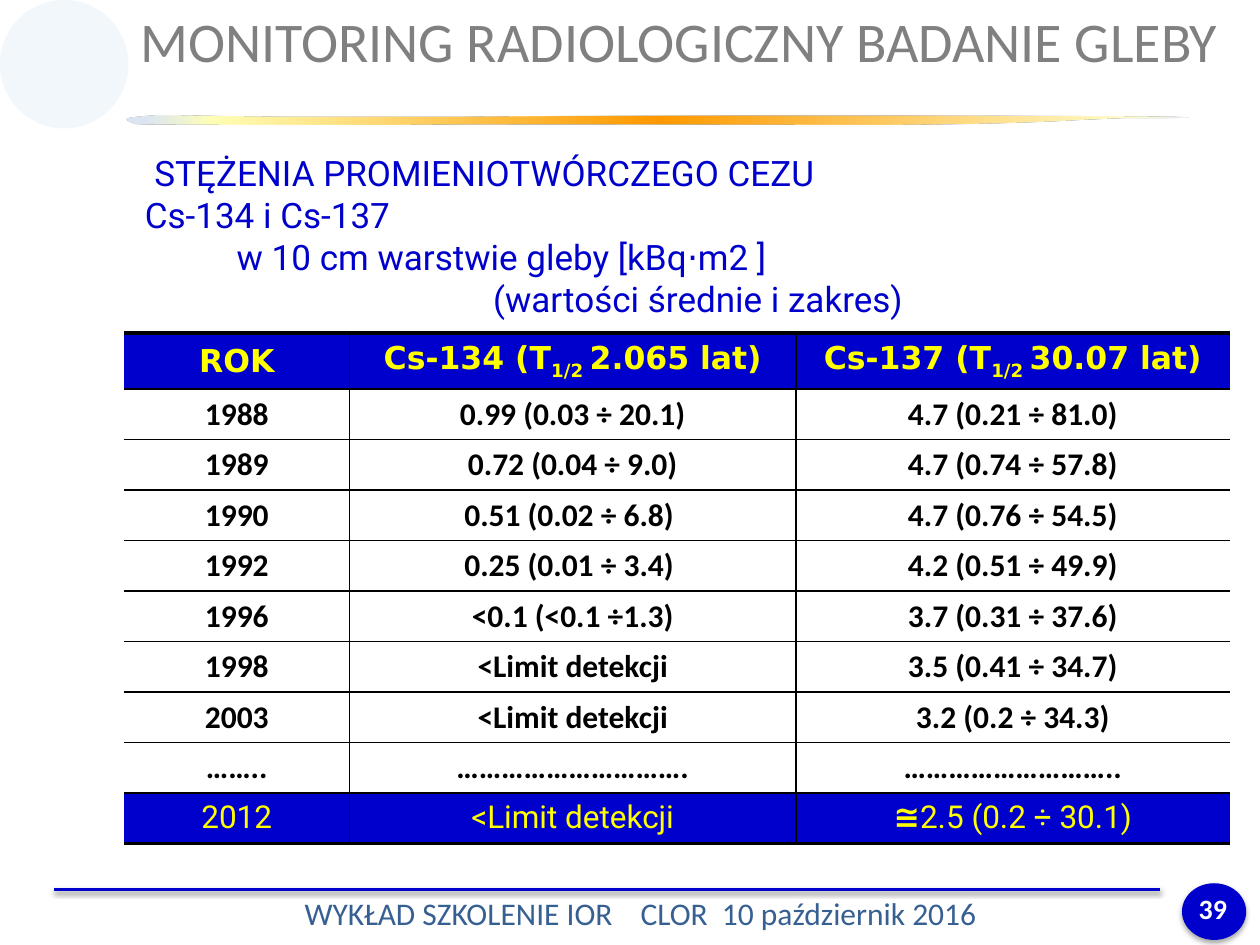
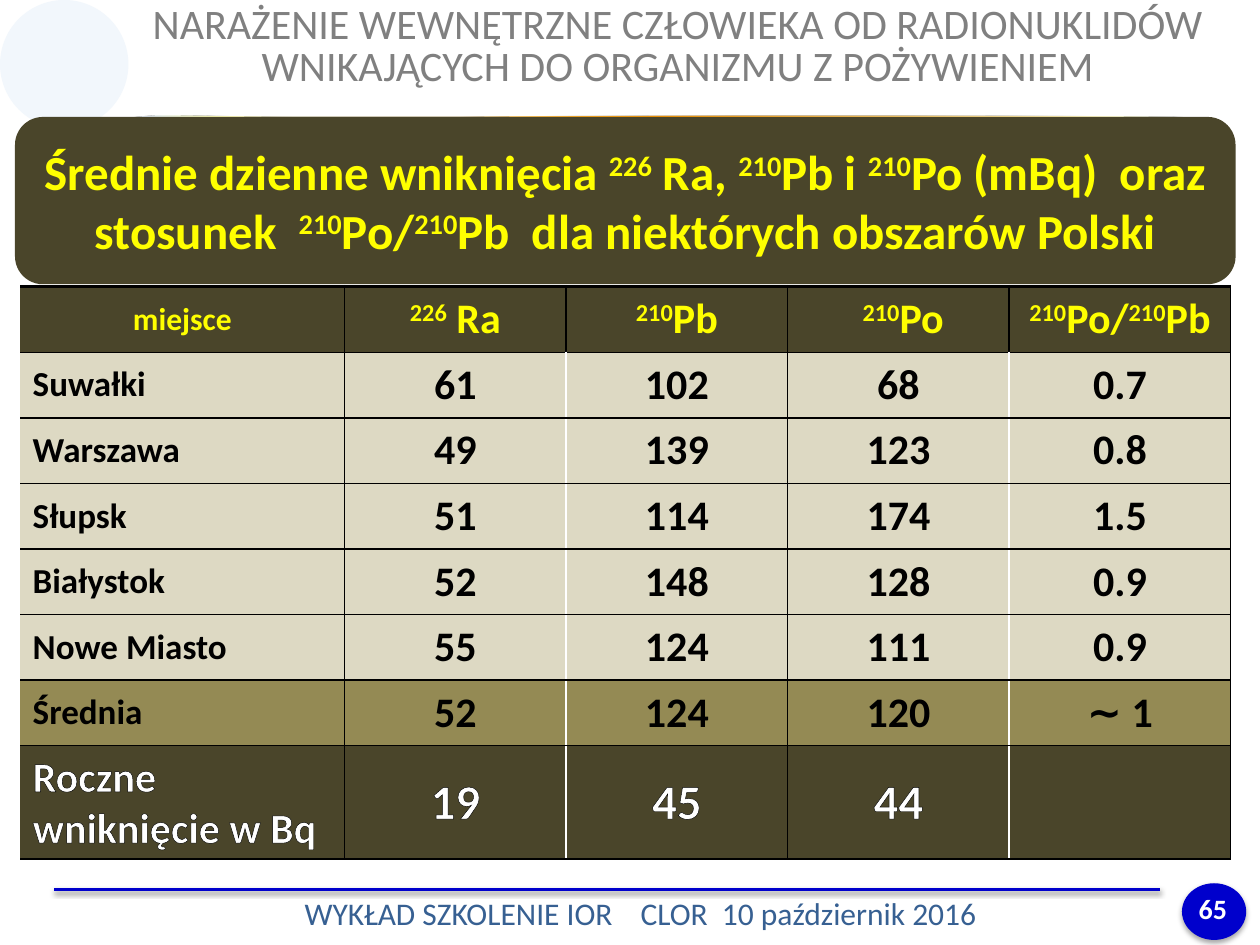
from lxml import etree
from pptx import Presentation
from pptx.dml.color import RGBColor
from pptx.enum import shapes, text
from pptx.oxml import ns
from pptx.util import Pt

# Shared look
BLUE, YELLOW, BLACK, WHITE = "0000CC", "FFFF00", "000000", "FFFFFF"
GREY, FOOTER_BLUE, PALE_BLUE = "808080", "376092", "F2F7FC"
OLIVE, KHAKI, SAND = "4A452A", "948A54", "DDD9C3"
FONT = "Calibri"
LEFT, CENTER = text.PP_ALIGN.LEFT, text.PP_ALIGN.CENTER
TOP, MIDDLE = text.MSO_ANCHOR.TOP, text.MSO_ANCHOR.MIDDLE

# Swoosh below the title: start, then cubic curves (two controls, end)
SWOOSH_START = (641.5, 67.7)
SWOOSH_CURVES = [
    ((669, 67.7), (693, 67.7), (669.6, 67)),
    ((573.8, 66.2), (360, 66.2), (262.8, 67)),
    ((230, 67), (200, 67), (167.8, 67)),
    ((140.4, 67), (103.7, 66.2), (90, 66.2)),
    ((64, 67.7), (72.7, 68.4), (76.3, 70.6)),
    ((71.3, 71.3), (150.5, 71.3), (222.5, 71.3)),
    ((293.8, 70.6), (447.8, 71.3), (505.4, 71.3)),
    ((601.2, 70.6), (614.9, 68.4), (641.5, 67.7)),
]


def color(hex_string):
    return RGBColor.from_string(hex_string)


def sub(parent, tag, **attrs):
    return etree.SubElement(parent, ns.qn(tag), {k: str(v) for k, v in attrs.items()})


def set_font(font, size, fill, name=FONT, bold=False):
    font.size, font.name, font.bold = Pt(size), name, bold
    font.color.rgb = color(fill)


def add_runs(p, marked, shift=30):
    """Pieces between ^ marks are raised or lowered by shift percent."""
    for i, piece in enumerate(marked.split("^")):
        if piece:
            r = p.add_run()
            r.text = piece
            if i % 2 and shift:
                r._r.get_or_add_rPr().set("baseline", str(shift * 1000))


def add_text(s, box, lines, size, fill, name=FONT, bold=False, align=CENTER, anchor=TOP):
    tf = s.shapes.add_textbox(*map(Pt, box)).text_frame
    tf.word_wrap, tf.vertical_anchor = True, anchor
    for i, line in enumerate(lines):
        p = tf.paragraphs[0] if i == 0 else tf.add_paragraph()
        add_runs(p, line)
        p.alignment = align
        set_font(p.font, size, fill, name, bold)
    return tf


def add_shape(s, kind, box, fill):
    sp = s.shapes.add_shape(kind, *map(Pt, box))
    sp.shadow.inherit = False
    sp.fill.solid()
    sp.fill.fore_color.rgb = color(fill)
    sp.line.fill.background()
    return sp


def add_shadow(sp, alpha, distance):
    spPr = sp._element.spPr
    effects = spPr.find(ns.qn("a:effectLst"))
    if effects is None:
        effects = sub(spPr, "a:effectLst")
    shadow = sub(effects, "a:outerShdw", blurRad=Pt(3.1), dist=Pt(distance),
                 dir=5400000, rotWithShape=0)
    sub(sub(shadow, "a:srgbClr", val=BLACK), "a:alpha", val=alpha * 1000)


def set_gradient(sp, stops):
    """Left-to-right gradient; stops are (percent, colour, opacity percent)."""
    grad = etree.Element(ns.qn("a:gradFill"), rotWithShape="1")
    stop_list = sub(grad, "a:gsLst")
    for pos, fill, opacity in stops:
        clr = sub(sub(stop_list, "a:gs", pos=pos * 1000), "a:srgbClr", val=fill)
        if opacity < 100:
            sub(clr, "a:alpha", val=opacity * 1000)
    sub(grad, "a:lin", ang=0, scaled=0)
    sp._element.spPr.insert(2, grad)


def add_swoosh(s):
    start, points, steps = SWOOSH_START, [], 10
    for c1, c2, end in SWOOSH_CURVES:
        for t in (i / steps for i in range(1, steps + 1)):
            u = 1 - t
            points.append(tuple(
                Pt(u**3 * a + 3 * u * u * t * b + 3 * u * t * t * c + t**3 * d)
                for a, b, c, d in zip(start, c1, c2, end)))
        start = end
    builder = s.shapes.build_freeform(*map(Pt, SWOOSH_START))
    builder.add_line_segments(points, close=True)
    sp = builder.convert_to_shape()
    sp.shadow.inherit = False
    sp.line.fill.background()
    set_gradient(sp, [(2, "DCE6F2", 100), (8, "FFFFB7", 100), (50, "FF9900", 100),
                      (95, "FFFFC9", 97), (100, "E1E8F5", 100)])


def add_frame(prs, number):
    """Blank slide with the number badge, rule, swoosh, corner disc and footer."""
    s = prs.slides.add_slide(prs.slide_layouts[6])
    badge = add_shape(s, shapes.MSO_SHAPE.OVAL, (675.4, 504.7, 36.7, 32.4), BLUE)
    add_shadow(badge, 35, 1.8)
    rule = s.shapes.add_connector(shapes.MSO_CONNECTOR.STRAIGHT,
                                  Pt(31), Pt(508.3), Pt(663), Pt(508.3))
    rule.line.color.rgb, rule.line.width = color(BLUE), Pt(1.5)
    add_shadow(rule, 38, 1.6)
    add_swoosh(s)
    add_shape(s, shapes.MSO_SHAPE.OVAL, (0, 0, 73.4, 73.4), PALE_BLUE)

    # Footer, with a tab between its two parts
    tf = add_text(s, (167, 507.6, 408.2, 28.8), [], 18, FOOTER_BLUE)
    p = tf.paragraphs[0]
    add_runs(p, "WYKŁAD SZKOLENIE IOR\tCLOR  10 październik 2016")
    p.alignment = LEFT
    sub(sub(p._p.get_or_add_pPr(), "a:tabLst"), "a:tab", pos=Pt(192), algn="l")
    set_font(p.font, 18, FOOTER_BLUE)
    add_text(s, (671.8, 506.2, 42.5, 28.8), [number], 16, WHITE, bold=True)
    return s


def add_table(s, left, top, widths, heights):
    frame = s.shapes.add_table(len(heights), len(widths), Pt(left), Pt(top),
                               Pt(sum(widths)), Pt(sum(heights)))
    table = frame.table
    table.first_row = table.horz_banding = False
    for column, width in zip(table.columns, widths):
        column.width = Pt(width)
    for row, height in zip(table.rows, heights):
        row.height = Pt(height)
    return table


def set_borders(cell, **sides):
    """Each of L, R, T, B is (colour, width), or None for no line."""
    tcPr = cell._tc.get_or_add_tcPr()
    for side in "LRTB":
        line = sides[side]
        if line:
            ln = sub(tcPr, "a:ln" + side, w=Pt(line[1]))
            sub(sub(ln, "a:solidFill"), "a:srgbClr", val=line[0])
        else:
            sub(sub(tcPr, "a:ln" + side, w=0), "a:noFill")


def fill_cell(cell, marked, size, ink, fill=None, name=FONT, bold=True,
              align=CENTER, shift=30):
    if fill:
        cell.fill.solid()
        cell.fill.fore_color.rgb = color(fill)
    else:
        cell.fill.background()
    cell.vertical_anchor = MIDDLE
    p = cell.text_frame.paragraphs[0]
    add_runs(p, marked, shift)
    p.alignment = align
    set_font(p.font, size, ink, name, bold)
    return p


def caesium_slide(prs):
    s = add_frame(prs, "39")
    tf = add_text(s, (67.7, 77, 632, 115.2),
                  ["STĘŻENIA PROMIENIOTWÓRCZEGO CEZU", "Cs-134 i Cs-137",
                   "w 10 cm warstwie gleby [kBq⋅m2 ]", "(wartości średnie i zakres)"],
                  20, BLUE, "Roboto", align=LEFT, anchor=MIDDLE)
    for p, indent in zip(tf.paragraphs, (13.5, 8, 60.5, 207)):
        p._p.get_or_add_pPr().set("marL", str(Pt(indent)))

    rows = [
        ("ROK", "Cs-134 (T^1/2 ^2.065 lat)", "Cs-137 (T^1/2 ^30.07 lat)"),
        ("1988", "0.99 (0.03 ÷ 20.1)", "4.7 (0.21 ÷ 81.0)"),
        ("1989", "0.72 (0.04 ÷ 9.0)", "4.7 (0.74 ÷ 57.8)"),
        ("1990", "0.51 (0.02 ÷ 6.8) ", "4.7 (0.76 ÷ 54.5)"),
        ("1992", "0.25 (0.01 ÷ 3.4) ", "4.2 (0.51 ÷ 49.9)"),
        ("1996", "<0.1 (<0.1 ÷1.3)", "3.7 (0.31 ÷ 37.6)"),
        ("1998", "<Limit detekcji", "3.5 (0.41 ÷ 34.7)"),
        ("2003", "<Limit detekcji", "3.2 (0.2 ÷ 34.3)"),
        ("……..", "………………………….", "……………………….."),
        ("2012", "<Limit detekcji", "^≅^2.5 (0.2 ÷ 30.1)"),
    ]
    last = len(rows) - 1
    styles = {0: dict(ink=YELLOW, fill=BLUE, name="DejaVu Sans", shift=-25),
              last: dict(ink=YELLOW, fill=BLUE, name="Roboto", bold=False, shift=0)}
    thin, thick = (BLACK, 1), (BLACK, 2.25)
    table = add_table(s, 70.8, 190.4, (129, 255, 248), [32] + [28.8] * last)
    for i, row in enumerate(rows):
        for j, value in enumerate(row):
            cell = table.cell(i, j)
            set_borders(cell, L=thin if j else None, R=thin if j < 2 else None,
                        T=thin if i else thick, B=thin if i < last else thick)
            p = fill_cell(cell, value, 18, **styles.get(i, dict(ink=BLACK)))
    p.runs[0].font.bold = True  # the ≅ sign
    add_text(s, (70.8, 0, 635, 46), ["MONITORING RADIOLOGICZNY BADANIE GLEBY"], 32, GREY)


def intake_slide(prs):
    s = add_frame(prs, "65")
    rows = [
        ("miejsce", "^226^ Ra", "^210^Pb", " ^210^Po", "^210^Po/^210^Pb"),
        ("Suwałki", "61", "102", "68", "0.7"),
        ("Warszawa", "49", "139", "123", "0.8"),
        ("Słupsk", "51", "114", "174", "1.5"),
        ("Białystok", "52", "148", "128", "0.9"),
        ("Nowe Miasto", "55", "124", "111", "0.9"),
        ("Średnia", "52", "124", "120", "∼ 1"),
        ("Roczne wniknięcie w Bq", "19", "45", "44", ""),
    ]
    # Row kinds: fill, ink, size of first column, size of the others
    header, place = (OLIVE, YELLOW, 18, 24), (SAND, BLACK, 20, 24)
    mean, yearly = (KHAKI, BLACK, 20, 24), (OLIVE, WHITE, 24, 28)
    kinds = [header] + [place] * 5 + [mean, yearly]
    table = add_table(s, 11.5, 163.8, [185.4] + [126.6] * 4, [37.5] * 7 + [64.5])
    for i, (row, (fill, ink, first, other)) in enumerate(zip(rows, kinds)):
        # Below the header, every second inner line is white
        lines = [None] + [(WHITE if i and j in (2, 4) else BLACK, 1) for j in range(1, 6)]
        for j, value in enumerate(row):
            cell = table.cell(i, j)
            set_borders(cell, L=lines[j], R=lines[j + 1],
                        T=(BLACK, 1 if i else 2.25), B=(BLACK, 1))
            p = fill_cell(cell, value, other if j else first, ink, fill,
                          align=CENTER if j or not i else LEFT)
            if ink == WHITE:
                for r in p.runs:
                    ln = etree.Element(ns.qn("a:ln"), w=str(Pt(0.25)))
                    sub(sub(ln, "a:solidFill"), "a:srgbClr", val=BLACK)
                    r._r.get_or_add_rPr().insert(0, ln)

    # Heading panel
    panel = add_shape(s, shapes.MSO_SHAPE.ROUNDED_RECTANGLE, (8.6, 66.8, 697.5, 95.6), OLIVE)
    tf = panel.text_frame
    tf.word_wrap, tf.vertical_anchor = True, MIDDLE
    p = tf.paragraphs[0]
    add_runs(p, "Średnie dzienne wniknięcia ^226^ Ra, ^210^Pb i ^210^Po (mBq)  oraz "
                "stosunek  ^210^Po/^210^Pb  dla niektórych obszarów Polski")
    p.alignment = CENTER
    set_font(p.font, 28, YELLOW, bold=True)

    tf = add_text(s, (71.3, 0, 632, 55.4),
                  ["NARAŻENIE WEWNĘTRZNE CZŁOWIEKA OD RADIONUKLIDÓW "
                   "WNIKAJĄCYCH DO ORGANIZMU Z POŻYWIENIEM"], 24, GREY)
    tf.paragraphs[0].line_spacing = Pt(24)


def main():
    prs = Presentation()
    prs.slide_width, prs.slide_height = Pt(720), Pt(540)
    caesium_slide(prs)
    intake_slide(prs)
    prs.save("out.pptx")


if __name__ == "__main__":
    main()
